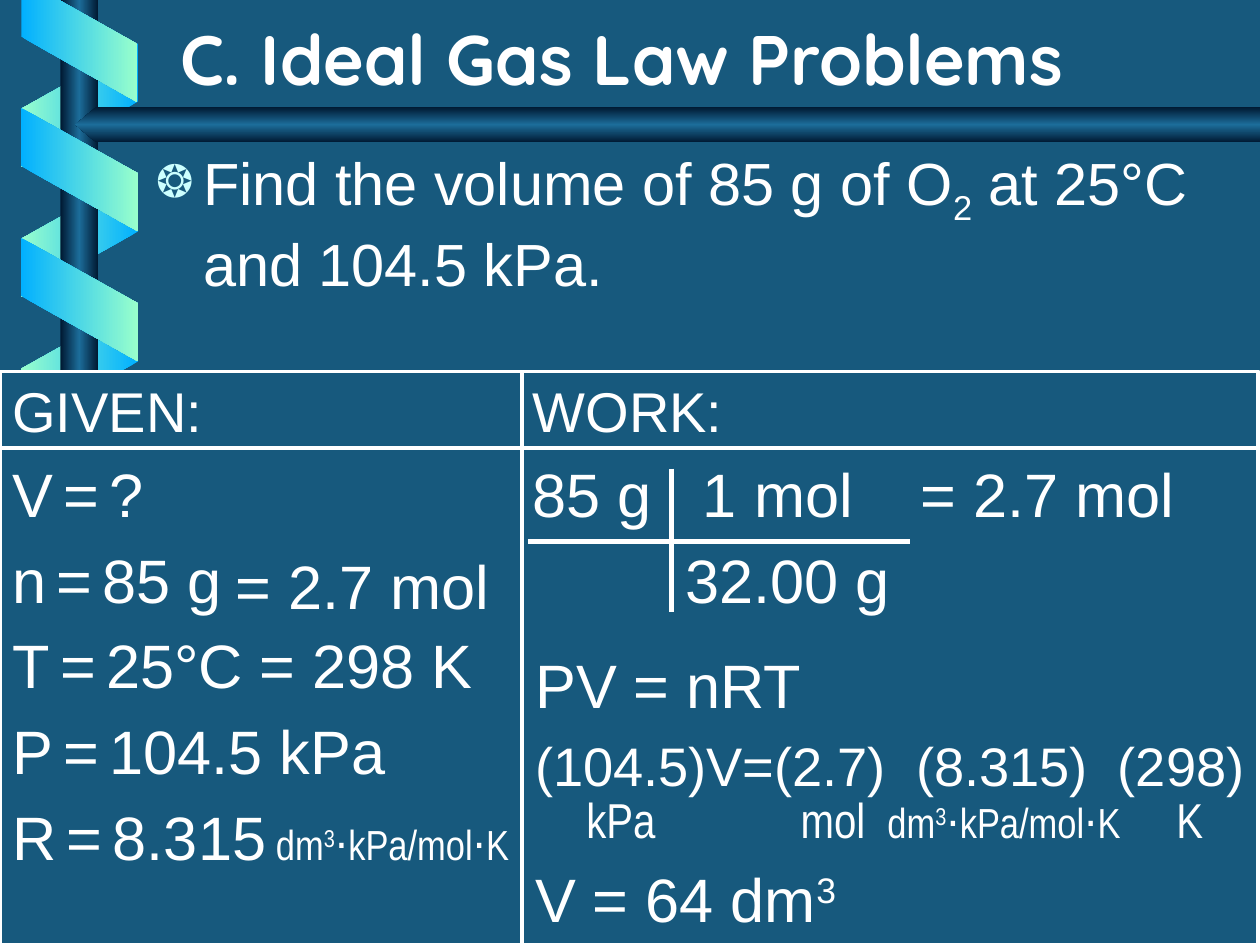
"""Build a chemistry slide that solves an ideal gas law problem."""
from lxml import etree
from pptx import Presentation
from pptx.dml.color import RGBColor
from pptx.enum.shapes import MSO_CONNECTOR, MSO_SHAPE
from pptx.enum.text import MSO_ANCHOR
from pptx.oxml import parse_xml
from pptx.oxml.ns import nsdecls, qn
from pptx.util import Cm, Pt

COLORS = {"background": "17597D", "white": "FFFFFF", "bullet": "CCFFFF", "mint": "99FFCC",
          "sky": "01B0FF", "navy": "001932", "steel": "1C6D9A"}
SANS, NARROW, DISPLAY = "Arial", "Arial Narrow", "Quicksand"
SLIDE_WIDTH, SLIDE_HEIGHT = 25.4, 19.05
PANEL_TOP, HEADER_BOTTOM, COLUMN_LEFT = 7.49, 9.04, 10.52
RIBBON_PITCH, RIBBON_SIZE = 2.62, (2.49, 2.36)
BACK_RIBBONS, FRONT_RIBBONS = (0.36, 0.94, 3), (0.36, 2.24, 2)
TOP_RIBBON = [(0.43, 0), (0.43, 0.74), (2.77, 2.06), (2.77, 0.89), (1.19, 0)]

TITLE = [[("C. Ideal Gas Law Problems", 40, DISPLAY)]]
PROBLEM = [[("Find the volume of 85 g of O", 34, SANS), ("2", 34, SANS, -25),
            (" at 25°C and 104.5 kPa.", 34, SANS)]]
VALUES = [("V", "?"), ("n", "85 g"), ("T", "25°C = 298 K"), ("P", "104.5 kPa"), ("R", "8.315")]
GAS_UNIT = [("dm", 24, NARROW), ("3", 24, NARROW, 30), ("⋅kPa/mol⋅K", 24, NARROW)]
MOLES = [[("= 2.7 mol", 35, SANS)]]
WORK = [[("WORK:", 32, SANS)], [("85 g   1 mol    = 2.7 mol", 35, SANS)],
        [("         32.00 g", 35, SANS)]]
SOLUTION = [[("PV = nRT", 35, SANS)], [("(104.5)V=(2.7)  (8.315)  (298)", 31, SANS)],
            [("   ", 35, SANS), ("kPa             mol  ", 28, NARROW), *GAS_UNIT,
             ("     K", 28, NARROW)],
            [("V = 64 dm", 35, SANS), ("3", 35, SANS, 30)]]
LINES = [((COLUMN_LEFT, PANEL_TOP), (COLUMN_LEFT, SLIDE_HEIGHT), 2.25),
         ((0, HEADER_BOTTOM), (SLIDE_WIDTH, HEADER_BOTTOM), 2.25),
         ((10.64, 10.92), (18.34, 10.92), 3), ((13.54, 9.45), (13.54, 12.34), 3)]


def given_paragraphs():
    paragraphs = [[("GIVEN:", 32, SANS)]]
    for symbol, value in VALUES:
        paragraphs.append([(symbol, 35, SANS), (" ", 21, SANS), ("=", 35, SANS),
                           (" ", 21, SANS), (value, 35, SANS)])
    paragraphs[-1] += [(" ", 24, NARROW), *GAS_UNIT]
    return paragraphs


def paint_gradient(shape, names, angle=0):
    shape.shadow.inherit = False
    shape.line.fill.background()
    stops = "".join(f'<a:gs pos="{100000 * index // (len(names) - 1)}">'
                    f'<a:srgbClr val="{COLORS[name]}"/></a:gs>' for index, name in enumerate(names))
    gradient = parse_xml(f'<a:gradFill {nsdecls("a")} rotWithShape="0"><a:gsLst>{stops}</a:gsLst>'
                         f'<a:lin ang="{angle * 60000}" scaled="0"/></a:gradFill>')
    shape.line._ln.addprevious(gradient)


def add_preset(slide, kind, left, top, width, height, adjustment=None, flip=False):
    shape = slide.shapes.add_shape(kind, Cm(left), Cm(top), Cm(width), Cm(height))
    if adjustment:
        shape.adjustments[0] = adjustment
    if flip:
        shape._element.spPr.find(qn("a:xfrm")).set("flipH", "1")
    return shape


def add_ribbons(slide, ribbons, rotation, flip):
    left, first_top, count = ribbons
    for index in range(count):
        ribbon = add_preset(slide, MSO_SHAPE.PARALLELOGRAM, left, first_top + index * RIBBON_PITCH,
                            *RIBBON_SIZE, 0.56, flip)
        ribbon.rotation = rotation
        paint_gradient(ribbon, ("sky", "mint"))


def add_text(slide, box, paragraphs, spacing=20, wrap=True, anchor=MSO_ANCHOR.TOP):
    text_box = slide.shapes.add_textbox(*(Cm(length) for length in box))
    frame = text_box.text_frame
    frame.word_wrap = wrap
    frame.vertical_anchor = anchor
    for index, runs in enumerate(paragraphs):
        paragraph = frame.paragraphs[0] if index == 0 else frame.add_paragraph()
        if spacing:
            paragraph.space_before = Pt(0)
            before = paragraph._p.pPr.find(qn("a:spcBef"))
            before.remove(before[0])
            etree.SubElement(before, qn("a:spcPct"), val=str(spacing * 1000))
        for text, size, font, *baseline in runs:
            run = paragraph.add_run()
            run.text = text
            run.font.size, run.font.name = Pt(size), font
            run.font.color.rgb = RGBColor.from_string(COLORS["white"])
            if baseline:
                run.font._element.set("baseline", str(baseline[0] * 1000))
    return frame


def add_line(slide, start, end, width):
    line = slide.shapes.add_connector(MSO_CONNECTOR.STRAIGHT, *(Cm(length) for length in start + end))
    line.line.width = Pt(width)
    line.line.color.rgb = RGBColor.from_string(COLORS["white"])
    etree.SubElement(line._element.spPr, qn("a:effectLst"))


def add_helix(slide):
    add_ribbons(slide, BACK_RIBBONS, 90, True)
    rod = add_preset(slide, MSO_SHAPE.RECTANGLE, 1.22, 0, 0.76, SLIDE_HEIGHT)
    paint_gradient(rod, ("navy", "steel", "navy"))
    add_ribbons(slide, FRONT_RIBBONS, 270, False)
    points = [(Cm(x), Cm(y)) for x, y in TOP_RIBBON]
    builder = slide.shapes.build_freeform(*points[0])
    builder.add_line_segments(points[1:])
    paint_gradient(builder.convert_to_shape(), ("sky", "mint"))
    bar = add_preset(slide, MSO_SHAPE.PENTAGON, 1.52, 2.16, 23.88, 0.71, 0.59, True)
    paint_gradient(bar, ("navy", "steel", "navy"), 90)


def add_title(slide):
    frame = add_text(slide, (3.38, 0, 21.59, 2.13), TITLE, 0, anchor=MSO_ANCHOR.BOTTOM)
    font = frame.paragraphs[0].runs[0].font
    font.bold = True
    font.fill._xPr.find(qn("a:solidFill")).addnext(parse_xml(
        f'<a:effectLst {nsdecls("a")}><a:outerShdw dist="38100" dir="2700000">'
        f'<a:srgbClr val="{COLORS["navy"]}"/></a:outerShdw></a:effectLst>'))


def add_problem(slide):
    frame = add_text(slide, (2.9, 2.82, 21.54, 3.96), PROBLEM, 100)
    properties = frame.paragraphs[0]._p.pPr
    properties.set("marL", str(Cm(0.95)))
    properties.set("indent", str(-Cm(0.95)))
    color = etree.SubElement(properties, qn("a:buClr"))
    etree.SubElement(color, qn("a:srgbClr"), val=COLORS["bullet"])
    etree.SubElement(properties, qn("a:buSzPct"), val="75000")
    etree.SubElement(properties, qn("a:buChar"), char="❂")


def main():
    presentation = Presentation()
    presentation.slide_width, presentation.slide_height = Cm(SLIDE_WIDTH), Cm(SLIDE_HEIGHT)
    slide = presentation.slides.add_slide(presentation.slide_layouts[6])
    background = RGBColor.from_string(COLORS["background"])
    slide.background.fill.solid()
    slide.background.fill.fore_color.rgb = background
    add_helix(slide)
    panel = add_preset(slide, MSO_SHAPE.RECTANGLE, 0, PANEL_TOP, 25.37, SLIDE_HEIGHT - PANEL_TOP)
    panel.shadow.inherit = False
    panel.fill.solid()
    panel.fill.fore_color.rgb = background
    panel.line.color.rgb = RGBColor.from_string(COLORS["white"])
    panel.line.width = Pt(2.25)
    add_text(slide, (0, 7.47, 10.62, 9.8), given_paragraphs())
    add_title(slide)
    add_problem(slide)
    add_text(slide, (4.5, 10.92, 5.64, 1.73), MOLES, 0, wrap=False)
    add_text(slide, (10.49, 7.47, 14.91, 5.33), WORK)
    solution = add_text(slide, (10.54, 12.93, 14.86, 6.12), SOLUTION, wrap=False)
    units = solution.paragraphs[2]
    units.space_before, units.line_spacing = Pt(0), 0.7
    for line in LINES:
        add_line(slide, *line)
    presentation.save("out.pptx")


if __name__ == "__main__":
    main()
